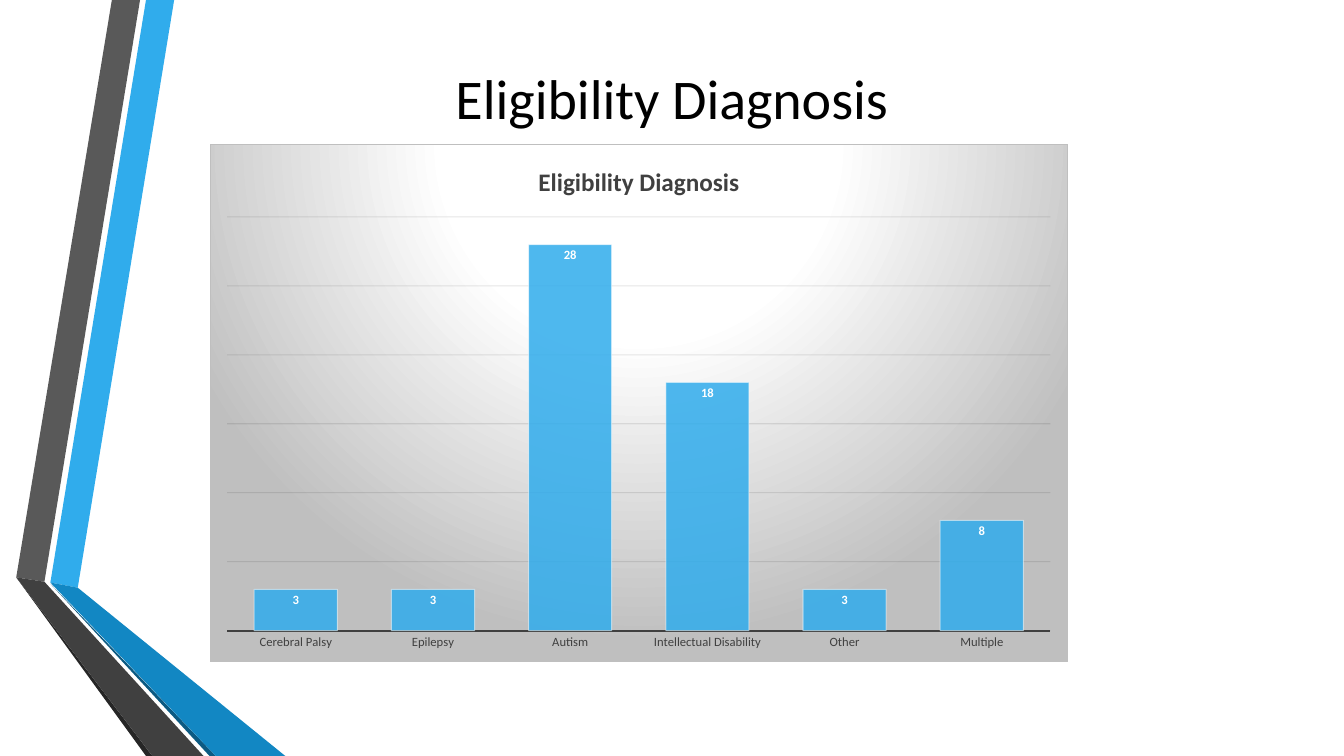
from dataclasses import dataclass

from lxml.etree import SubElement
from pptx import Presentation
from pptx.chart.chart import Chart
from pptx.chart.data import CategoryChartData
from pptx.dml.color import RGBColor
from pptx.enum.chart import XL_CHART_TYPE, XL_LABEL_POSITION, XL_TICK_MARK
from pptx.enum.text import MSO_ANCHOR, MSO_AUTO_SIZE, PP_ALIGN
from pptx.oxml import parse_xml
from pptx.oxml.ns import nsdecls, qn
from pptx.slide import Slide
from pptx.util import Cm, Pt


@dataclass(frozen=True)
class Theme:
    font: str = "Calibri"
    black: str = "000000"
    white: str = "FFFFFF"
    text: str = "404040"
    blue: str = "30ACEC"
    mid_blue: str = "1287C3"
    navy: str = "0C5A82"
    grey: str = "595959"
    dark: str = "262626"
    silver: str = "BFBFBF"
    grid: str = "0D0D0D"
    title_size: int = 40
    chart_title_size: int = 18
    base_size: int = 10
    label_size: int = 9


@dataclass(frozen=True)
class Band:
    color: str
    points: tuple[tuple[float, float], ...]  # cm


THEME = Theme()
HEADING = "Eligibility Diagnosis"
DIAGNOSES = {"Cerebral Palsy": 3, "Epilepsy": 3, "Autism": 28,
             "Intellectual Disability": 18, "Other": 3, "Multiple": 8}
W, H = 33.87, 19.05
BANDS = (
    Band(THEME.blue, ((1.27, 14.68), (1.96, 14.81), (4.39, 0), (3.68, 0))),
    Band(THEME.grey, ((3.53, 0), (2.82, 0), (0.41, 14.55), (1.12, 14.66))),
    Band(THEME.dark, ((0.41, 14.55), (3.68, H), (3.84, H))),
    Band(THEME.navy, ((1.27, 14.71), (5.28, H), (5.44, H))),
    Band(THEME.mid_blue, ((1.27, 14.68), (5.44, H), (7.19, H), (1.96, 14.81))),
    Band(THEME.text, ((5.13, H), (1.12, 14.66), (0.41, 14.55), (3.84, H))),
)


def rgb(color: str) -> RGBColor:
    return RGBColor.from_string(color)


def set_font(font, size: int, color: str, bold: bool = False) -> None:
    font.name, font.size, font.bold = THEME.font, Pt(size), bold
    font.color.rgb = rgb(color)


def set_line(line, color: str, width: float) -> None:
    line.color.rgb = rgb(color)
    line.width = Pt(width)


def set_alpha(chart: Chart, owner: str, fill_path: str, percent: int) -> None:
    """Make a solid fill of the first such chart part partly transparent."""
    tags = [owner, "c:spPr", *fill_path.split("/"), "a:srgbClr"]
    color = chart.element.find(".//" + "/".join(qn(tag) for tag in tags))
    SubElement(color, qn("a:alpha")).set("val", str(percent * 1000))


def draw_band(s: Slide, band: Band) -> None:
    start, *rest = [(Cm(x), Cm(y)) for x, y in band.points]
    builder = s.shapes.build_freeform(*start)
    builder.add_line_segments(rest)
    sp = builder.convert_to_shape()
    sp.shadow.inherit = False
    sp.fill.solid()
    sp.fill.fore_color.rgb = rgb(band.color)
    sp.line.fill.background()


def format_title(s: Slide) -> None:
    title = s.shapes.title
    title.left, title.top, title.width, title.height = Cm(2.34), Cm(0.94), Cm(29.18), Cm(3)
    tf = title.text_frame
    tf.text = HEADING
    tf.word_wrap = True
    tf.auto_size = MSO_AUTO_SIZE.NONE
    tf.vertical_anchor = MSO_ANCHOR.MIDDLE
    p = tf.paragraphs[0]
    p.alignment = PP_ALIGN.CENTER
    set_font(p.font, THEME.title_size, THEME.black)
    title.element.getparent().append(title.element)  # in front of the bands


def set_background(chart: Chart) -> None:
    """Radial gradient and thin border behind the whole chart."""
    stops = "".join(f'<a:gs pos="{pos * 1000}"><a:srgbClr val="{color}"/></a:gs>'
                    for pos, color in ((0, THEME.white), (39, THEME.white), (100, THEME.silver)))
    chart.element.find(qn("c:chart")).addnext(parse_xml(
        f'<c:spPr {nsdecls("c", "a")}><a:gradFill><a:gsLst>{stops}</a:gsLst>'
        '<a:path path="circle"><a:fillToRect l="50000" t="-80000" r="50000" b="180000"/></a:path>'
        f'</a:gradFill><a:ln w="{Pt(0.75)}"><a:solidFill><a:srgbClr val="{THEME.silver}"/>'
        '</a:solidFill></a:ln></c:spPr>'))


def set_plot_area(chart: Chart, x: float, y: float, w: float, h: float) -> None:
    """Place the inner plot area, in fractions of the chart."""
    plot_area = chart.element.find(qn("c:chart")).find(qn("c:plotArea"))
    for old in plot_area.findall(qn("c:layout")):
        plot_area.remove(old)
    values = (("layoutTarget", "inner"), ("xMode", "edge"), ("yMode", "edge"),
              ("x", x), ("y", y), ("w", w), ("h", h))
    items = "".join(f'<c:{tag} val="{val}"/>' for tag, val in values)
    plot_area.insert(0, parse_xml(
        f'<c:layout {nsdecls("c")}><c:manualLayout>{items}</c:manualLayout></c:layout>'))


def add_diagnosis_chart(s: Slide) -> None:
    data = CategoryChartData()
    data.categories = list(DIAGNOSES)
    data.add_series("Series 1", list(DIAGNOSES.values()))
    chart = s.shapes.add_chart(XL_CHART_TYPE.COLUMN_CLUSTERED, Cm(5.28), Cm(3.63),
                               Cm(21.64), Cm(13.06), data).chart
    set_font(chart.font, THEME.base_size, THEME.black)
    chart.has_legend = False
    set_background(chart)
    set_plot_area(chart, 0.02, 0.14, 0.96, 0.8)

    # Chart title
    chart.has_title = True
    tf = chart.chart_title.text_frame
    tf.text = HEADING
    set_font(tf.paragraphs[0].font, THEME.chart_title_size, THEME.text, bold=True)

    # Axes
    cat = chart.category_axis
    cat.major_tick_mark = cat.minor_tick_mark = XL_TICK_MARK.NONE
    set_font(cat.tick_labels.font, THEME.label_size, THEME.text)
    set_line(cat.format.line, THEME.text, 1.5)
    val = chart.value_axis
    val.visible = False
    val.minimum_scale, val.maximum_scale, val.major_unit = 0, 30, 5
    val.has_major_gridlines = True
    set_line(val.major_gridlines.format.line, THEME.grid, 0.75)
    set_alpha(chart, "c:majorGridlines", "a:ln/a:solidFill", 10)

    # Columns and value labels
    plot = chart.plots[0]
    plot.vary_by_categories = False
    plot.gap_width = 65
    series = plot.series[0]
    series.format.fill.solid()
    series.format.fill.fore_color.rgb = rgb(THEME.blue)
    set_line(series.format.line, THEME.white, 0.75)
    set_alpha(chart, "c:ser", "a:solidFill", 85)
    set_alpha(chart, "c:ser", "a:ln/a:solidFill", 50)
    labels = series.data_labels
    labels.show_value = True
    labels.position = XL_LABEL_POSITION.INSIDE_END
    set_font(labels.font, THEME.label_size, THEME.white, bold=True)


def main() -> None:
    prs = Presentation()
    prs.slide_width, prs.slide_height = Cm(W), Cm(H)
    s = prs.slides.add_slide(prs.slide_layouts[5])
    for band in BANDS:
        draw_band(s, band)
    format_title(s)
    add_diagnosis_chart(s)
    prs.save("out.pptx")


if __name__ == "__main__":
    main()
